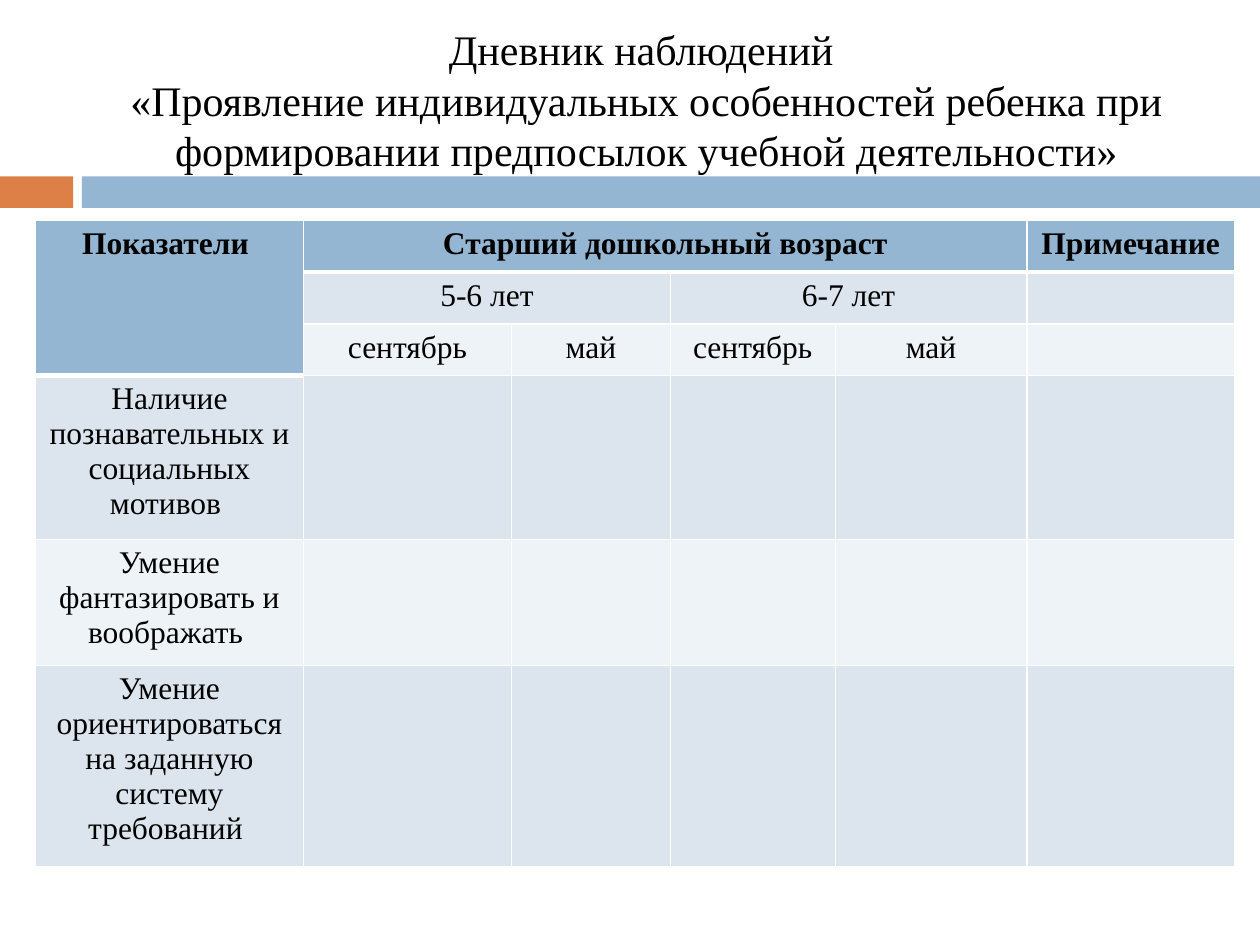
"""Build the observation diary slide with its table of indicators."""
from dataclasses import dataclass

from lxml.etree import SubElement
from pptx import Presentation
from pptx.dml.color import RGBColor
from pptx.enum.shapes import MSO_SHAPE
from pptx.enum.text import MSO_ANCHOR, PP_ALIGN
from pptx.oxml.ns import qn
from pptx.util import Inches, Pt


@dataclass(frozen=True)
class Theme:
    font: str = "Times New Roman"
    title_size: int = 24
    table_size: int = 18
    text: str = "000000"
    accent: str = "DD8047"
    header: str = "94B6D2"
    bands: tuple = ("EEF3F7", "DCE5EE")
    border: str = "FFFFFF"
    thin_line: int = 1
    heavy_line: int = 3


THEME = Theme()
COLUMN_WIDTHS = (2.13, 1.65, 1.26, 1.31, 1.52, 1.65)
ROW_HEIGHTS = (0.41, 0.41, 0.41, 1.2, 0.93, 1.47)
HEADER_ROWS = 3
TITLE_LINES = (
    "Дневник наблюдений ",
    "«Проявление индивидуальных особенностей ребенка при формировании предпосылок учебной деятельности»",
)
TABLE_ROWS = (
    ("Показатели ", "Старший дошкольный возраст", "", "", "", "Примечание "),
    ("", "5-6 лет", "", "6-7 лет", "", ""),
    ("", "сентябрь", "май", "сентябрь", "май", ""),
    ("Наличие познавательных и социальных мотивов ",),
    ("Умение фантазировать и воображать ",),
    ("Умение ориентироваться на заданную систему требований ",),
)
MERGES = (((0, 0), (2, 0)), ((0, 1), (0, 4)), ((1, 1), (1, 2)), ((1, 3), (1, 4)))


def add_text_run(paragraph, text, size, bold=False):
    run = paragraph.add_run()
    run.text = text
    run.font.name = THEME.font
    run.font.size = Pt(size)
    run.font.bold = bold
    run.font.color.rgb = RGBColor.from_string(THEME.text)


def add_bar(slide, left, width, color):
    shape = slide.shapes.add_shape(
        MSO_SHAPE.RECTANGLE, Inches(left), Inches(1.4), Inches(width), Inches(0.25)
    )
    shape.shadow.inherit = False
    shape.fill.solid()
    shape.fill.fore_color.rgb = RGBColor.from_string(color)
    shape.line.fill.background()


def add_title(slide):
    shape = slide.shapes.add_textbox(Inches(0.67), Inches(0.25), Inches(8.92), Inches(1.08))
    frame = shape.text_frame
    frame.word_wrap = True
    frame.vertical_anchor = MSO_ANCHOR.MIDDLE
    paragraph = frame.paragraphs[0]
    paragraph.alignment = PP_ALIGN.CENTER
    for index, line in enumerate(TITLE_LINES):
        if index:
            paragraph.add_line_break()
        add_text_run(paragraph, line, THEME.title_size)


def is_header(row, column):
    return row == 0 or (column == 0 and 0 < row < HEADER_ROWS)


def set_borders(cell, heavy_sides):
    properties = cell._tc.get_or_add_tcPr()
    for side in ("lnL", "lnR", "lnT", "lnB"):
        width = THEME.heavy_line if side in heavy_sides else THEME.thin_line
        line = SubElement(properties, qn(f"a:{side}"), w=str(Pt(width)))
        fill = SubElement(line, qn("a:solidFill"))
        SubElement(fill, qn("a:srgbClr"), val=THEME.border)


def format_cell(cell, row, column):
    header = is_header(row, column)
    heavy_sides = []
    if header:
        heavy_sides.append("lnB")
    elif is_header(row - 1, column):
        heavy_sides.append("lnT")
    set_borders(cell, heavy_sides)
    cell.fill.solid()
    color = THEME.header if header else THEME.bands[row % 2]
    cell.fill.fore_color.rgb = RGBColor.from_string(color)


def add_indicator_table(slide):
    table = slide.shapes.add_table(
        len(ROW_HEIGHTS), len(COLUMN_WIDTHS), Inches(0.28), Inches(1.75),
        Inches(sum(COLUMN_WIDTHS)), Inches(sum(ROW_HEIGHTS)),
    ).table
    for column, width in zip(table.columns, COLUMN_WIDTHS):
        column.width = Inches(width)
    for row, height in enumerate(ROW_HEIGHTS):
        table.rows[row].height = Inches(height)
        for column in range(len(COLUMN_WIDTHS)):
            format_cell(table.cell(row, column), row, column)
    for first, last in MERGES:
        table.cell(*first).merge(table.cell(*last))
    for row, texts in enumerate(TABLE_ROWS):
        for column, text in enumerate(texts):
            if text:
                paragraph = table.cell(row, column).text_frame.paragraphs[0]
                paragraph.alignment = PP_ALIGN.CENTER
                add_text_run(paragraph, text, THEME.table_size, is_header(row, column))


def main():
    presentation = Presentation()
    presentation.slide_width = Inches(10)
    presentation.slide_height = Inches(7.5)
    slide = presentation.slides.add_slide(presentation.slide_layouts[6])
    add_bar(slide, 0, 0.58, THEME.accent)
    add_bar(slide, 0.65, 9.35, THEME.header)
    add_title(slide)
    add_indicator_table(slide)
    presentation.save("out.pptx")


if __name__ == "__main__":
    main()
